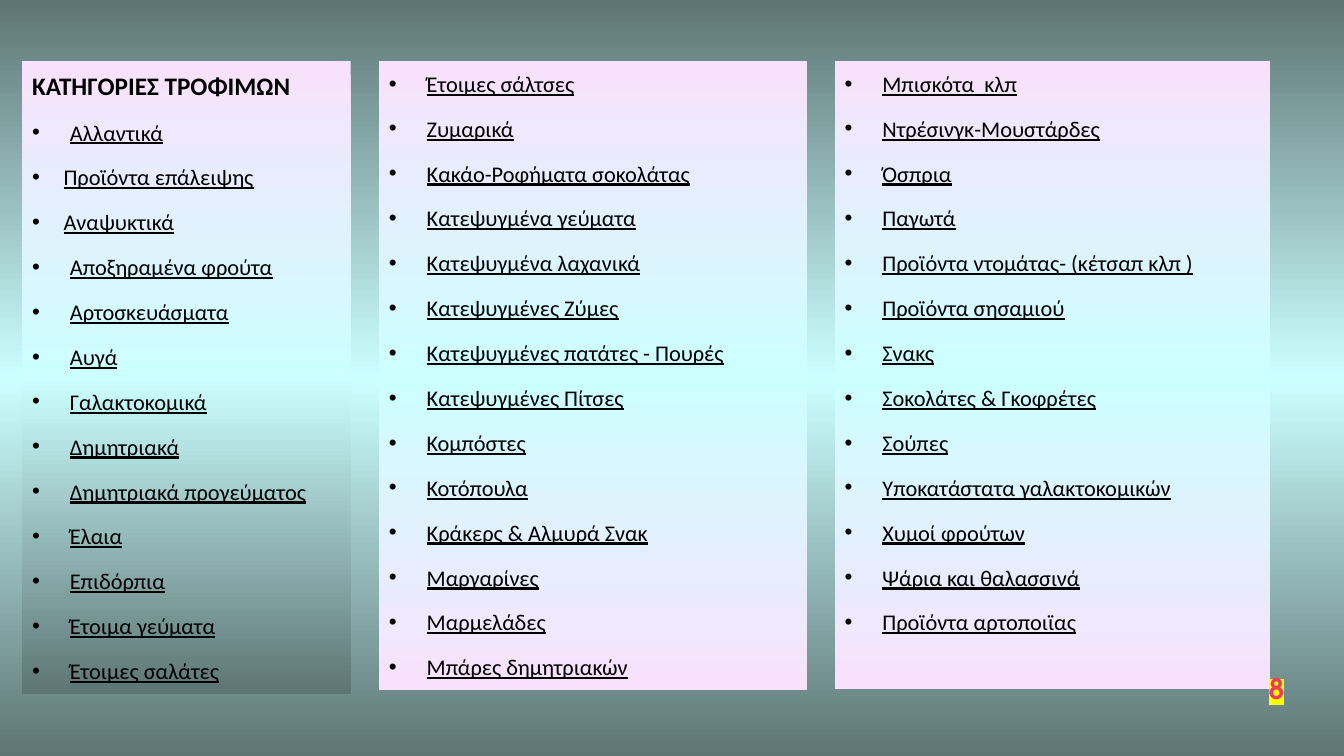
from dataclasses import dataclass

from lxml.etree import SubElement
from pptx import Presentation
from pptx.dml.color import RGBColor
from pptx.enum.shapes import MSO_SHAPE as Preset
from pptx.enum.text import MSO_ANCHOR as Anchor, MSO_AUTO_SIZE as AutoSize, PP_ALIGN as Align
from pptx.oxml.ns import qn
from pptx.util import Pt


@dataclass(frozen=True)
class Theme:
    ink: str = "000000"
    pink: str = "F8E2FB"
    aqua: str = "CCFFFF"
    slate: str = "5E7575"
    number: str = "F03B5E"
    marker: str = "FFFF00"
    body_font: str = "Calibri"
    number_font: str = "TeX Gyre Adventor"
    heading_size: float = 18
    item_size: float = 16
    number_size: float = 20


@dataclass(frozen=True)
class Column:
    left: float
    top: float
    width: float
    height: float
    bottom_colour: str
    items: tuple[str, ...]
    heading: str = ""


THEME = Theme()
INDENT = 27
NARROW_INDENT = 22.5
NARROW_ITEMS = {"Προϊόντα επάλειψης", "Αναψυκτικά"}
LIST_SPACING = {"alignment": Align.LEFT, "line_spacing": 1.15, "space_after": Pt(10)}
HEADING_FONT = {"name": THEME.body_font, "size": Pt(THEME.heading_size), "bold": True}
ITEM_FONT = {"name": THEME.body_font, "size": Pt(THEME.item_size), "underline": True}
NUMBER_FONT = {"name": THEME.number_font, "size": Pt(THEME.number_size), "bold": True}

COLUMNS = (
    Column(15.84, 43.5, 234.7, 452, THEME.slate, (
        "Αλλαντικά", "Προϊόντα επάλειψης", "Αναψυκτικά", "Αποξηραμένα φρούτα",
        "Αρτοσκευάσματα", "Αυγά", "Γαλακτοκομικά", "Δημητριακά",
        "Δημητριακά προγεύματος", "Έλαια", "Επιδόρπια", "Έτοιμα γεύματα",
        "Έτοιμες σαλάτες",
    ), "ΚΑΤΗΓΟΡΙΕΣ ΤΡΟΦΙΜΩΝ"),
    Column(270.7, 43.6, 306, 449.3, THEME.pink, (
        "Έτοιμες σάλτσες", "Ζυμαρικά", "Κακάο-Ροφήματα σοκολάτας",
        "Κατεψυγμένα γεύματα", "Κατεψυγμένα λαχανικά", "Κατεψυγμένες Ζύμες",
        "Κατεψυγμένες πατάτες - Πουρές", "Κατεψυγμένες Πίτσες", "Κομπόστες",
        "Κοτόπουλα", "Κράκερς & Αλμυρά Σνακ", "Μαργαρίνες", "Μαρμελάδες",
        "Μπάρες δημητριακών",
    )),
    Column(596.2, 43.6, 311, 448.6, THEME.pink, (
        "Μπισκότα  κλπ", "Ντρέσινγκ-Μουστάρδες", "Όσπρια", "Παγωτά",
        "Προϊόντα ντομάτας- (κέτσαπ κλπ )", "Προϊόντα σησαμιού", "Σνακς",
        "Σοκολάτες & Γκοφρέτες", "Σούπες", "Υποκατάστατα γαλακτοκομικών",
        "Χυμοί φρούτων", "Ψάρια και θαλασσινά", "Προϊόντα αρτοποιϊας",
    )),
)


def apply_format(target, values: dict) -> None:
    for name, value in values.items():
        setattr(target, name, value)


def fill_vertically(owner, fill, colours: tuple[str, ...]) -> None:
    fill.gradient()
    fill.gradient_angle = 270
    stops = next(owner.iter(qn("a:gsLst")))
    for stop in list(stops):
        stops.remove(stop)
    for index, colour in enumerate(colours):
        position = 100000 * index // (len(colours) - 1)
        stop = SubElement(stops, qn("a:gs"), pos=str(position))
        SubElement(stop, qn("a:srgbClr"), val=colour)


def write_run(paragraph, text: str, font_format: dict, colour: str):
    run = paragraph.add_run()
    run.text = text
    run.font.color.rgb = RGBColor.from_string(colour)
    apply_format(run.font, font_format)
    return run


def add_bullet(paragraph, indent: float) -> None:
    properties = paragraph._p.get_or_add_pPr()
    properties.set("marL", str(Pt(indent)))
    properties.set("indent", str(-Pt(indent)))
    SubElement(properties, qn("a:buFont"), typeface="Arial")
    SubElement(properties, qn("a:buChar"), char="•")


def draw_column(slide, column: Column) -> None:
    panel = slide.shapes.add_shape(
        Preset.RECTANGLE, Pt(column.left), Pt(column.top), Pt(column.width), Pt(column.height))
    panel.shadow.inherit = False
    panel.line.fill.background()
    fill_vertically(panel._element, panel.fill, (THEME.pink, THEME.aqua, column.bottom_colour))
    frame = panel.text_frame
    apply_format(frame, {"word_wrap": True, "vertical_anchor": Anchor.TOP,
                         "auto_size": AutoSize.NONE})
    paragraph = frame.paragraphs[0]
    if column.heading:
        apply_format(paragraph, LIST_SPACING)
        write_run(paragraph, column.heading, HEADING_FONT, THEME.ink)
    for index, item in enumerate(column.items):
        if index or column.heading:
            paragraph = frame.add_paragraph()
        apply_format(paragraph, LIST_SPACING)
        add_bullet(paragraph, NARROW_INDENT if item in NARROW_ITEMS else INDENT)
        write_run(paragraph, item, ITEM_FONT, THEME.ink)


def draw_page_number(slide, number: str) -> None:
    frame = slide.shapes.add_textbox(Pt(841), Pt(465.8), Pt(83.5), Pt(38.9)).text_frame
    apply_format(frame, {"word_wrap": True, "vertical_anchor": Anchor.BOTTOM,
                         "margin_bottom": Pt(0.7)})
    paragraph = frame.paragraphs[0]
    paragraph.alignment = Align.RIGHT
    run = write_run(paragraph, number, NUMBER_FONT, THEME.number)
    properties = run._r.get_or_add_rPr()
    highlight = SubElement(properties, qn("a:highlight"))
    SubElement(highlight, qn("a:srgbClr"), val=THEME.marker)
    properties.find(qn("a:solidFill")).addnext(highlight)


def main() -> None:
    deck = Presentation()
    apply_format(deck, {"slide_width": Pt(960), "slide_height": Pt(540)})
    slide = deck.slides.add_slide(deck.slide_layouts.get_by_name("Blank"))
    fill_vertically(slide._element, slide.background.fill,
                    (THEME.slate, THEME.aqua, THEME.slate))
    for column in COLUMNS:
        draw_column(slide, column)
    draw_page_number(slide, "8")
    deck.save("out.pptx")


if __name__ == "__main__":
    main()
